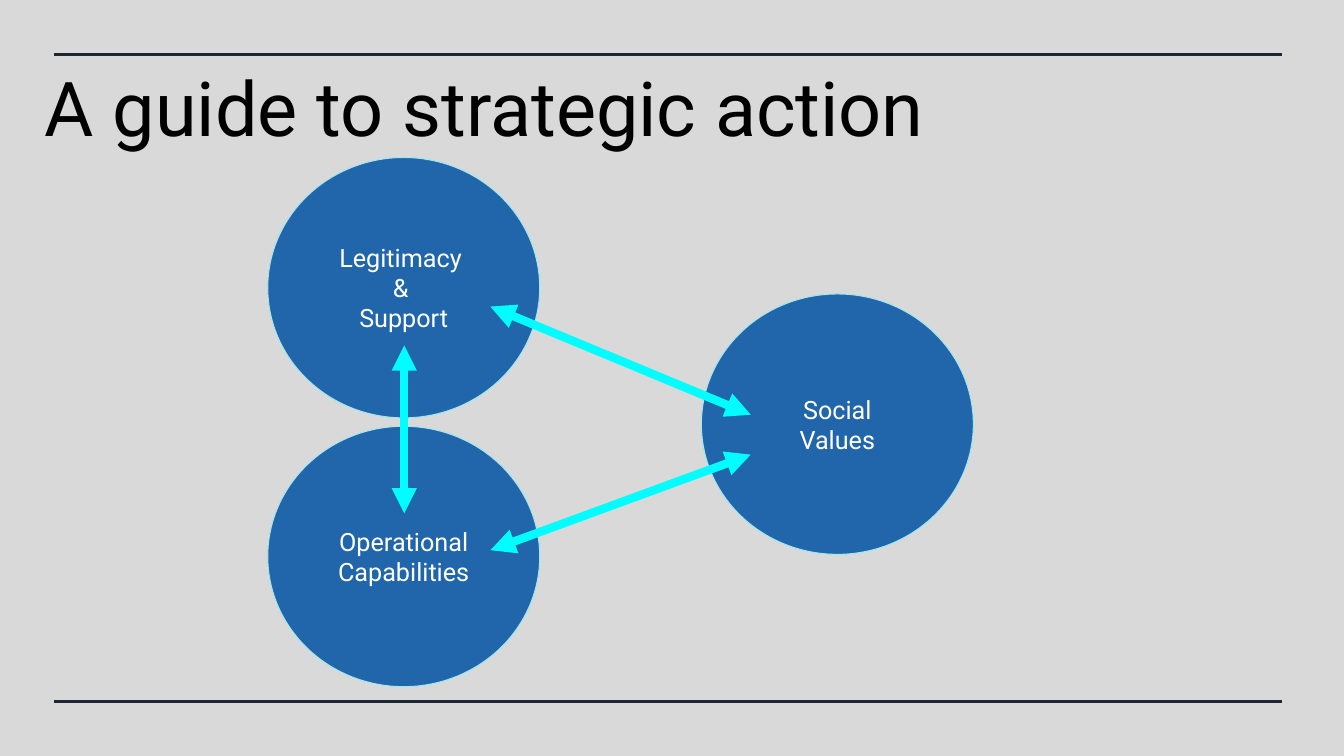
"""Build a slide of three linked circles that guide strategic action."""
from dataclasses import dataclass

from lxml.etree import SubElement
from pptx import Presentation
from pptx.dml.color import RGBColor as Rgb
from pptx.enum.shapes import MSO_CONNECTOR as Link, MSO_SHAPE as Form
from pptx.enum.text import MSO_ANCHOR as Anchor, MSO_AUTO_SIZE as Fit, PP_ALIGN as Align
from pptx.oxml.ns import qn
from pptx.shapes.shapetree import _BaseGroupShapes as Shapes
from pptx.text.text import TextFrame
from pptx.util import Pt

PX = 9525
FONT = "Roboto"
COLORS = {
    "back": "D9D9D9",
    "rule": "1C2732",
    "title": "000000",
    "disc": "2166AB",
    "edge": "A3E8EE",
    "label": "FFFFFF",
    "arrow": "00FDFF",
}
WIDE, HIGH = 259, 248


@dataclass
class Disc:
    left: int
    top: int
    text: str


@dataclass
class Line:
    x1: int
    y1: int
    x2: int
    y2: int


RULES = [Line(51, y, 1221, y) for y in (52, 668)]
DISCS = [
    Disc(255, 150, "Legitimacy \n& \nSupport"),
    Disc(255, 406, "Operational\nCapabilities"),
    Disc(668, 280, "Social\nValues"),
]
ARROWS = [
    Line(467, 524, 715, 433),
    Line(467, 292, 715, 395),
    Line(385, 489, 385, 329),
]


def color(name: str) -> Rgb:
    return Rgb.from_string(COLORS[name])


def apply(item: object, values: dict) -> None:
    for key, value in values.items():
        setattr(item, key, value)


def write(frame: TextFrame, text: str, size: int, tint: str, align: Align, anchor: Anchor) -> None:
    frame.text = text
    apply(frame, {"word_wrap": True, "vertical_anchor": anchor})
    for para in frame.paragraphs:
        para.alignment = align
        for run in para.runs:
            apply(run.font, {"name": FONT, "size": Pt(size)})
            run.font.color.rgb = color(tint)


def draw_line(shapes: Shapes, line: Line, tint: str, width: float, heads: bool = False) -> None:
    ends = (n * PX for n in (line.x1, line.y1, line.x2, line.y2))
    link = shapes.add_connector(Link.STRAIGHT, *ends)
    link.line.color.rgb = color(tint)
    link.line.width = Pt(width)
    props = link._element.spPr
    if heads:
        for tag in ("a:headEnd", "a:tailEnd"):
            SubElement(props.find(qn("a:ln")), qn(tag), type="triangle")
    SubElement(props, qn("a:effectLst"))


def draw_disc(shapes: Shapes, disc: Disc) -> None:
    box = (n * PX for n in (disc.left, disc.top, WIDE, HIGH))
    oval = shapes.add_shape(Form.OVAL, *box)
    oval.shadow.inherit = False
    oval.fill.solid()
    oval.fill.fore_color.rgb = color("disc")
    oval.line.color.rgb = color("edge")
    oval.line.width = Pt(0)
    write(oval.text_frame, disc.text, 18, "label", Align.CENTER, Anchor.MIDDLE)


def main() -> None:
    deck = Presentation()
    apply(deck, {"slide_width": 1280 * PX, "slide_height": 720 * PX})
    slide = deck.slides.add_slide(deck.slide_layouts[5])
    slide.background.fill.solid()
    slide.background.fill.fore_color.rgb = color("back")

    title = slide.shapes.title
    apply(title, {"left": 33 * PX, "top": 53 * PX, "width": 1148 * PX, "height": 97 * PX})
    write(title.text_frame, "A guide to strategic action", 54, "title", Align.LEFT, Anchor.TOP)
    title.text_frame.auto_size = Fit.SHAPE_TO_FIT_TEXT

    for rule in RULES:
        draw_line(slide.shapes, rule, "rule", 2.25)
    group = slide.shapes.add_group_shape()
    for disc in DISCS:
        draw_disc(group.shapes, disc)
    for arrow in ARROWS:
        draw_line(group.shapes, arrow, "arrow", 6, heads=True)
    deck.save("out.pptx")


if __name__ == "__main__":
    main()
